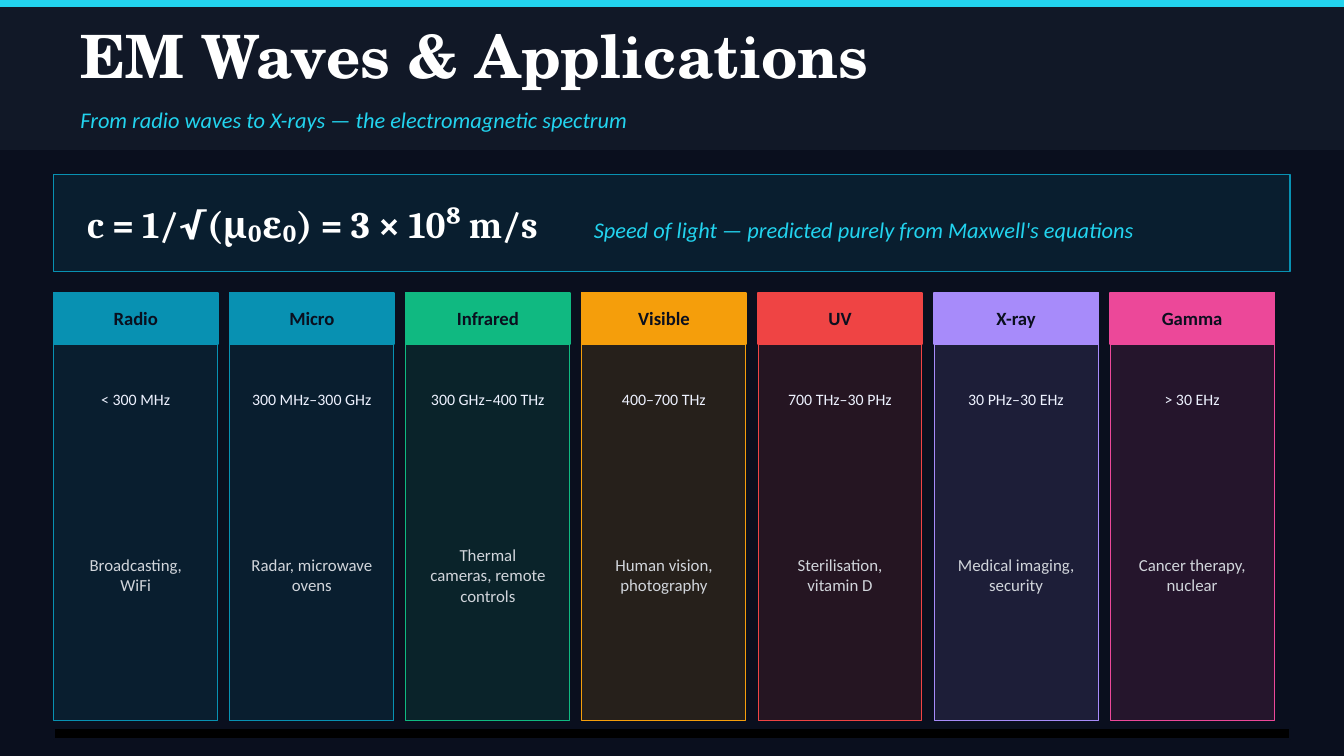
"""Build a slide on electromagnetic waves and their applications."""
from dataclasses import dataclass

from lxml.etree import SubElement
from pptx import Presentation
from pptx.dml.color import RGBColor
from pptx.enum.shapes import MSO_SHAPE
from pptx.enum.text import MSO_ANCHOR, MSO_AUTO_SIZE, PP_ALIGN
from pptx.oxml.ns import qn
from pptx.shapes.autoshape import Shape
from pptx.slide import Slide
from pptx.util import Inches, Pt

NIGHT = RGBColor(0x0A, 0x0F, 0x1E)
BANNER = RGBColor(0x11, 0x18, 0x27)
CYAN = RGBColor(0x22, 0xD3, 0xEE)
TEAL = RGBColor(0x08, 0x91, 0xB2)
GREEN = RGBColor(0x10, 0xB9, 0x81)
AMBER = RGBColor(0xF5, 0x9E, 0x0B)
RED = RGBColor(0xEF, 0x44, 0x44)
VIOLET = RGBColor(0xA7, 0x8B, 0xFA)
PINK = RGBColor(0xEC, 0x48, 0x99)
WHITE = RGBColor(0xFF, 0xFF, 0xFF)
PALE = RGBColor(0xEE, 0xF2, 0xFF)
GREY = RGBColor(0xD1, 0xD5, 0xDB)
BLACK = RGBColor(0x00, 0x00, 0x00)

SLIDE_WIDTH = 10
SLIDE_HEIGHT = SLIDE_WIDTH * 9 / 16
LEFT = 0.4
BANDS_TOP = 2.18
BAND_WIDTH = 1.22
BAND_STEP = 1.31
BAND_INSET = 0.06
HEADER_HEIGHT = 0.38
TINT_OPACITY = 12


@dataclass(frozen=True)
class Box:
    left: float
    top: float
    width: float
    height: float


@dataclass(frozen=True)
class Band:
    name: str
    frequency: str
    uses: str
    color: RGBColor


BANDS = (
    Band("Radio", "< 300 MHz", "Broadcasting, WiFi", TEAL),
    Band("Micro", "300 MHz–300 GHz", "Radar, microwave ovens", TEAL),
    Band("Infrared", "300 GHz–400 THz", "Thermal cameras, remote controls", GREEN),
    Band("Visible", "400–700 THz", "Human vision, photography", AMBER),
    Band("UV", "700 THz–30 PHz", "Sterilisation, vitamin D", RED),
    Band("X-ray", "30 PHz–30 EHz", "Medical imaging, security", VIOLET),
    Band("Gamma", "> 30 EHz", "Cancer therapy, nuclear", PINK),
)


def place(shape: Shape, box: Box) -> None:
    shape.left, shape.top = Inches(box.left), Inches(box.top)
    shape.width, shape.height = Inches(box.width), Inches(box.height)


def add_panel(slide: Slide, box: Box, fill: RGBColor, line: RGBColor,
              line_width: float = 1, opacity: int = 100) -> None:
    shape = slide.shapes.add_shape(MSO_SHAPE.RECTANGLE, 0, 0, 0, 0)
    place(shape, box)
    shape.shadow.inherit = False
    shape.fill.solid()
    shape.fill.fore_color.rgb = fill
    shape.line.color.rgb = line
    shape.line.width = Pt(line_width)
    if opacity < 100:
        color = shape._element.spPr.find(qn("a:solidFill"))[0]
        SubElement(color, qn("a:alpha"), val=str(opacity * 1000))


def add_run(shape: Shape, text: str, *, size: float, color: RGBColor,
            font: str = "Calibri", bold: bool = False, italic: bool = False) -> None:
    run = shape.text_frame.paragraphs[0].add_run()
    run.text = text
    run.font.name = font
    run.font.size = Pt(size)
    run.font.bold = bold
    run.font.italic = italic
    run.font.color.rgb = color


def write(shape: Shape, box: Box, text: str, *, align: PP_ALIGN = PP_ALIGN.LEFT,
          margin: float | None = None, **run_format) -> None:
    place(shape, box)
    frame = shape.text_frame
    frame.word_wrap = True
    frame.auto_size = MSO_AUTO_SIZE.NONE
    frame.vertical_anchor = MSO_ANCHOR.MIDDLE
    if margin is not None:
        frame.margin_left = frame.margin_right = Inches(margin)
        frame.margin_top = frame.margin_bottom = Inches(margin)
    frame.paragraphs[0].alignment = align
    add_run(shape, text, **run_format)


def add_text(slide: Slide, box: Box, text: str, **text_format) -> Shape:
    shape = slide.shapes.add_textbox(0, 0, 0, 0)
    write(shape, box, text, **text_format)
    return shape


def add_heading(slide: Slide) -> None:
    add_panel(slide, Box(0, 0, SLIDE_WIDTH, 0.06), CYAN, CYAN)
    add_panel(slide, Box(0, 0.06, SLIDE_WIDTH, 1.05), BANNER, BANNER)
    title = slide.shapes.title
    slide.shapes._spTree.append(title._element)
    write(title, Box(0.5, 0.1, 9, 0.62), "EM Waves & Applications",
          size=32, color=WHITE, font="TeX Gyre Schola", bold=True)
    add_text(slide, Box(0.5, 0.74, 9, 0.3),
             "From radio waves to X-rays — the electromagnetic spectrum",
             size=12, color=CYAN, italic=True)


def add_formula(slide: Slide) -> None:
    add_panel(slide, Box(LEFT, 1.3, 9.2, 0.72), TEAL, TEAL, 0.8, TINT_OPACITY)
    formula = add_text(slide, Box(0.55, 1.3, 9, 0.72), "c = 1/√(μ₀ε₀) = 3 × 10⁸ m/s",
                       size=20, color=WHITE, font="Cambria", bold=True)
    properties = formula.text_frame.paragraphs[0]._p.get_or_add_pPr()
    tab_list = SubElement(properties, qn("a:tabLst"))
    SubElement(tab_list, qn("a:tab"), pos=str(Inches(3.77)), algn="l")
    add_run(formula, "\tSpeed of light — predicted purely from Maxwell's equations",
            size=12, color=CYAN, italic=True)


def add_band(slide: Slide, band: Band, left: float) -> None:
    header = Box(left, BANDS_TOP, BAND_WIDTH, HEADER_HEIGHT)
    inner_left = left + BAND_INSET
    inner_width = BAND_WIDTH - 2 * BAND_INSET
    add_panel(slide, Box(left, BANDS_TOP, BAND_WIDTH, 3.18),
              band.color, band.color, 0.5, TINT_OPACITY)
    add_panel(slide, header, band.color, band.color)
    add_text(slide, header, band.name, align=PP_ALIGN.CENTER, margin=0,
             size=10, color=NIGHT, bold=True)
    add_text(slide, Box(inner_left, 2.62, inner_width, 0.7), band.frequency,
             align=PP_ALIGN.CENTER, size=8.5, color=PALE)
    add_text(slide, Box(inner_left, 3.38, inner_width, 1.8), band.uses,
             align=PP_ALIGN.CENTER, size=9, color=GREY)


def main() -> None:
    presentation = Presentation()
    presentation.slide_width = Inches(SLIDE_WIDTH)
    presentation.slide_height = Inches(SLIDE_HEIGHT)
    slide = presentation.slides.add_slide(presentation.slide_layouts.get_by_name("Title Only"))
    slide.background.fill.solid()
    slide.background.fill.fore_color.rgb = NIGHT
    add_heading(slide)
    add_formula(slide)
    for index, band in enumerate(BANDS):
        add_band(slide, band, LEFT + index * BAND_STEP)
    add_panel(slide, Box(LEFT, 5.42, 9.2, 0.08), BLACK, NIGHT)
    presentation.save("out.pptx")


if __name__ == "__main__":
    main()
